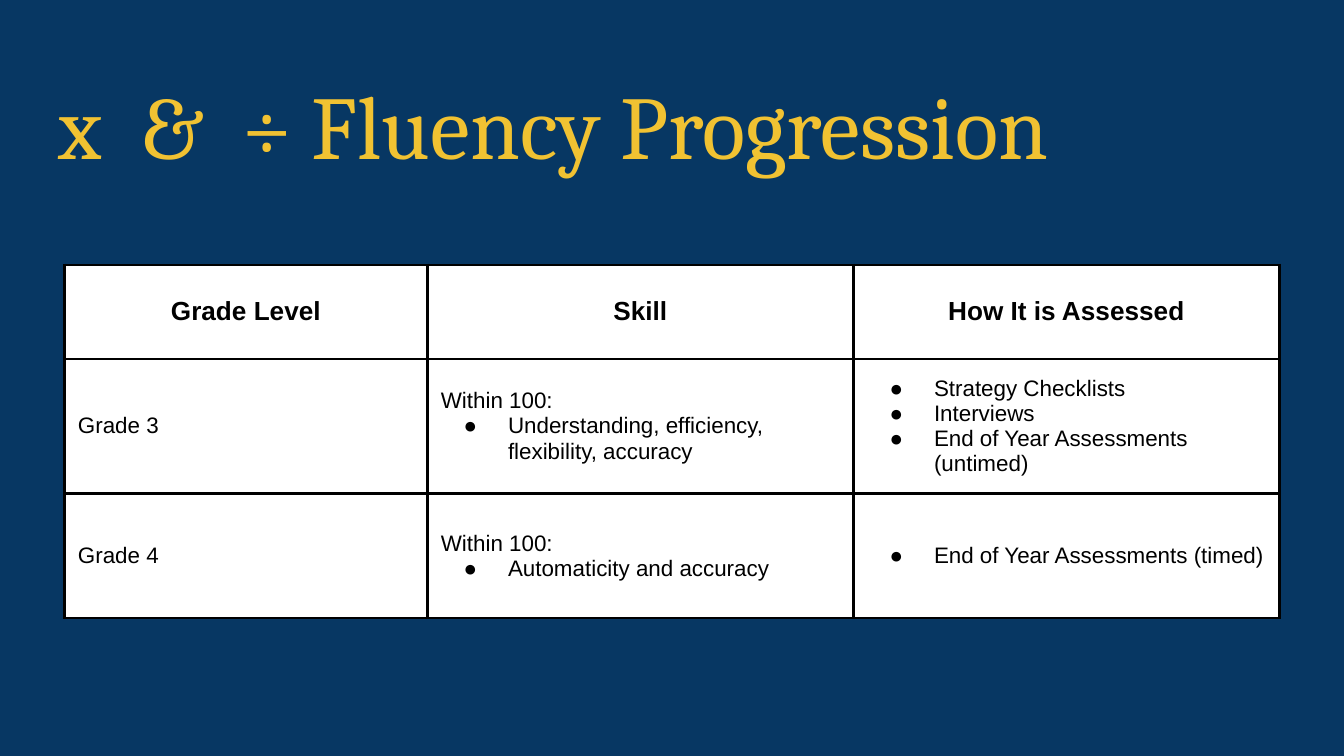
from lxml import etree
from pptx import Presentation
from pptx.dml.color import RGBColor
from pptx.enum.text import MSO_ANCHOR, PP_ALIGN
from pptx.oxml.ns import qn
from pptx.util import Inches, Pt

MIDDLE, TOP = MSO_ANCHOR.MIDDLE, MSO_ANCHOR.TOP
CENTER, LEFT = PP_ALIGN.CENTER, PP_ALIGN.LEFT

NAVY, GOLD, BLACK, WHITE = "073763", "F1C232", "000000", "FFFFFF"
BULLET = "●"
INSET = 0.1
COLUMN_WIDTHS = [2.7, 3.17, 3.17]
ROW_HEIGHTS = [0.7, 0.85, 0.93]
HEADINGS = ["Grade Level", "Skill", "How It is Assessed"]
GRADES = [
    [
        ["Grade 3"],
        ["Within 100:", "● Understanding, efficiency, flexibility, accuracy"],
        ["● Strategy Checklists", "● Interviews", "● End of Year Assessments (untimed)"],
    ],
    [
        ["Grade 4"],
        ["Within 100:", "● Automaticity and accuracy"],
        ["● End of Year Assessments (timed)"],
    ],
]


def color(value):
    return RGBColor.from_string(value)


def add_bullet(paragraph, size, font, ink):
    properties = paragraph._p.get_or_add_pPr()
    properties.set("marL", str(Inches(0.5)))
    properties.set("indent", str(Inches(-0.33)))
    bullet_color = etree.SubElement(properties, qn("a:buClr"))
    etree.SubElement(bullet_color, qn("a:srgbClr")).set("val", ink)
    etree.SubElement(properties, qn("a:buSzPts")).set("val", str(size * 100))
    etree.SubElement(properties, qn("a:buFont")).set("typeface", font)
    etree.SubElement(properties, qn("a:buChar")).set("char", BULLET)


def write(frame, lines, size=12, font="Arial", ink=BLACK, bold=False, align=LEFT):
    for index, line in enumerate(lines):
        paragraph = frame.add_paragraph() if index else frame.paragraphs[0]
        paragraph.alignment = align
        if line.startswith(BULLET):
            add_bullet(paragraph, size, font, ink)
        run = paragraph.add_run()
        run.text = line.removeprefix(BULLET + " ")
        run.font.size = Pt(size)
        run.font.name = font
        run.font.bold = bold
        run.font.color.rgb = color(ink)


def set_insets(holder):
    holder.margin_left = holder.margin_right = Inches(INSET)
    holder.margin_top = holder.margin_bottom = Inches(INSET)


def add_borders(cell, ink=BLACK, width=1.5):
    properties = cell._tc.get_or_add_tcPr()
    for position, side in enumerate(("a:lnL", "a:lnR", "a:lnT", "a:lnB")):
        border = etree.Element(qn(side), w=str(Pt(width)))
        fill = etree.SubElement(border, qn("a:solidFill"))
        etree.SubElement(fill, qn("a:srgbClr")).set("val", ink)
        properties.insert(position, border)


def add_title(slide, left, top, width, height):
    title = slide.shapes.add_textbox(
        Inches(left), Inches(top), Inches(width), Inches(height)
    )
    frame = title.text_frame
    frame.word_wrap = True
    frame.vertical_anchor = TOP
    set_insets(frame)
    write(frame, ["x  &  ÷ Fluency Progression"], size=48, font="Cambria", ink=GOLD)


def add_progression(slide, left, top, width, height):
    rows = [[[heading] for heading in HEADINGS]] + GRADES
    progression = slide.shapes.add_table(
        len(rows), len(HEADINGS),
        Inches(left), Inches(top), Inches(width), Inches(height),
    ).table
    for column, column_width in zip(progression.columns, COLUMN_WIDTHS):
        column.width = Inches(column_width)
    for row, row_height in zip(progression.rows, ROW_HEIGHTS):
        row.height = Inches(row_height)
    for row_index, row in enumerate(rows):
        if row_index == 0:
            style = {"size": 14, "bold": True, "align": CENTER}
        else:
            style = {}
        for column_index, lines in enumerate(row):
            cell = progression.cell(row_index, column_index)
            cell.fill.solid()
            cell.fill.fore_color.rgb = color(WHITE)
            cell.vertical_anchor = MIDDLE
            set_insets(cell)
            add_borders(cell)
            write(cell.text_frame, lines, **style)


def main():
    presentation = Presentation()
    presentation.slide_width = Inches(10)
    presentation.slide_height = Inches(10) * 9 // 16
    slide = presentation.slides.add_slide(presentation.slide_layouts[6])
    slide.background.fill.solid()
    slide.background.fill.fore_color.rgb = color(NAVY)
    add_title(slide, 0.34, 0.42, 9.32, 0.81)
    add_progression(slide, 0.48, 1.97, sum(COLUMN_WIDTHS), sum(ROW_HEIGHTS))
    presentation.save("out.pptx")


if __name__ == "__main__":
    main()
